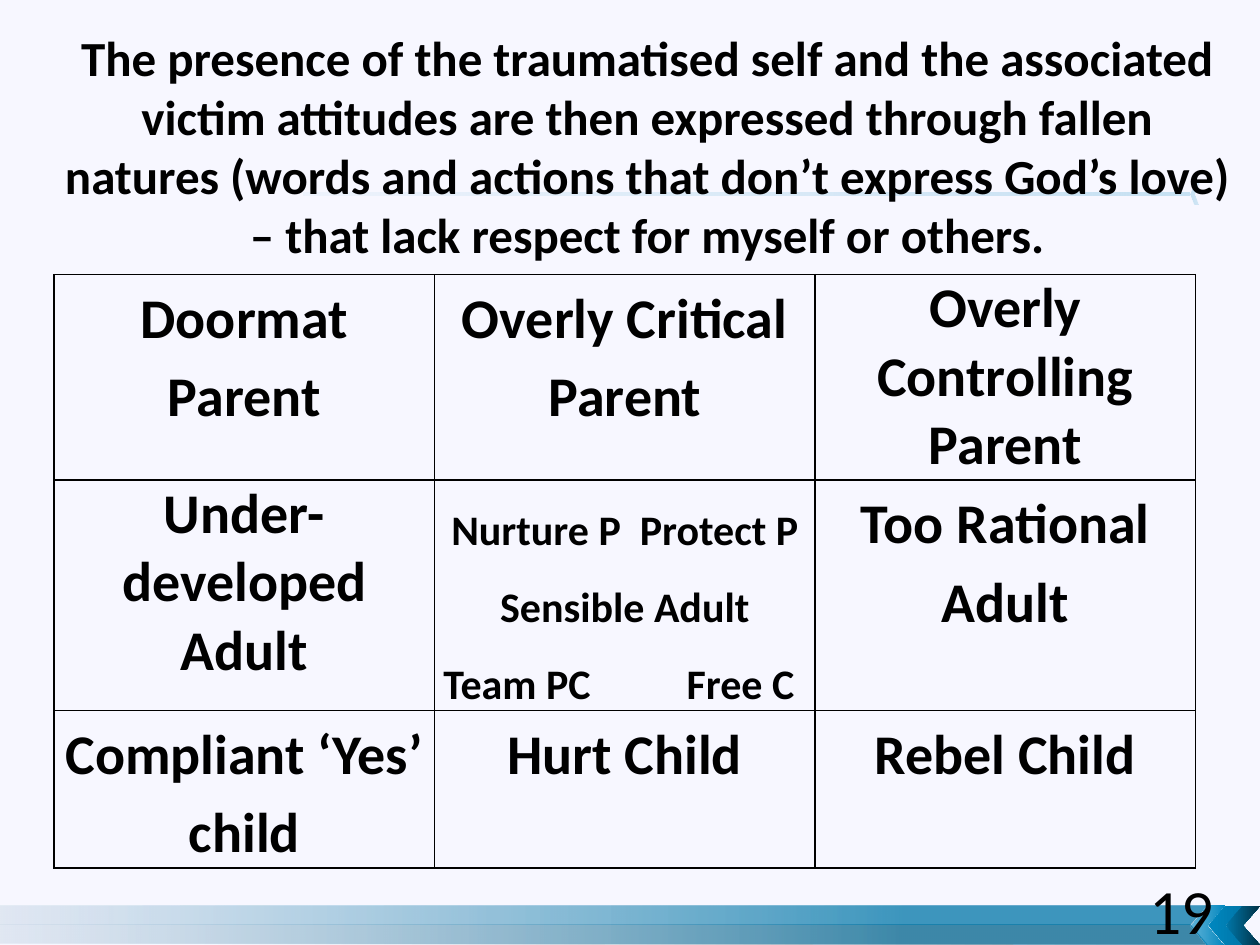
from dataclasses import dataclass

from pptx import Presentation
from pptx.dml.color import RGBColor
from pptx.enum.shapes import MSO_SHAPE as Shape
from pptx.enum.text import MSO_ANCHOR as Anchor, MSO_AUTO_SIZE as AutoSize, PP_ALIGN as Align
from pptx.oxml import parse_xml
from pptx.oxml.ns import nsdecls, qn
from pptx.util import Inches, Pt


@dataclass(frozen=True)
class Theme:
    """Colours, font and type sizes."""
    font: str = "Calibri"
    ink: str = "000000"
    ground: str = "F7F7FF"
    pale: str = "CCD9E8"
    sky: str = "0087BF"
    blue: str = "0077A9"
    teal: str = "00648D"
    navy: str = "003246"
    title: int = 28
    large: int = 32
    small: int = 24
    number: int = 36


def grid(*values):
    """Turn columns and rows of a tenth of an inch into lengths."""
    return [Inches(value / 10) for value in values]


class SlideBuilder:
    """Hold the style and the current slide."""

    def __init__(self, page, theme):
        """Paint the background."""
        self.page, self.theme = page, theme
        fill = page.background.fill
        fill.solid()
        fill.fore_color.rgb = RGBColor.from_string(theme.ground)

    def style(self, para, size, bold=True, align=Align.CENTER):
        """Format one paragraph."""
        para.alignment = align
        font = para.font
        font.name, font.size, font.bold = self.theme.font, Pt(size), bold
        font.color.rgb = RGBColor.from_string(self.theme.ink)

    def blend(self, shape, stops):
        """Fill a shape from right to left with (place, colour, opacity) stops."""
        marks = "".join(
            f'<a:gs pos="{place * 1000}"><a:srgbClr val="{colour}">'
            f'<a:alpha val="{opacity * 1000}"/></a:srgbClr></a:gs>'
            for place, colour, opacity in stops)
        shape.shadow.inherit = False
        shape.line.fill.background()
        shape.fill.gradient()
        properties = shape.element.spPr
        properties.replace(properties.find(qn("a:gradFill")), parse_xml(
            f'<a:gradFill rotWithShape="1" {nsdecls("a")}><a:gsLst>{marks}</a:gsLst>'
            '<a:lin ang="10800000" scaled="0"/></a:gradFill>'))

    def band(self, points, colour):
        """Draw a fading footer band."""
        start, *others = [grid(*point) for point in points]
        builder = self.page.shapes.build_freeform(*start, scale=1.0)
        builder.add_line_segments(others, close=True)
        self.blend(builder.convert_to_shape(),
                   [(25, colour, 75), (100, self.theme.pale, 50)])

    def block(self, kind, frame, stops, flipped=False):
        """Draw a preset shape with a gradient."""
        shape = self.page.shapes.add_shape(kind, *grid(*frame))
        if flipped:
            shape.element.spPr.xfrm.set("flipH", "1")
        self.blend(shape, stops)

    def title(self, text, frame):
        """Place the title in front of the decoration."""
        title = self.page.shapes.title
        title.left, title.top, title.width, title.height = grid(*frame)
        self.page.shapes.element.append(title.element)
        self.fill_frame(title.text_frame, text, self.theme.title)

    def number(self, text, frame):
        """Add the slide number."""
        box = self.page.shapes.add_textbox(*grid(*frame))
        self.fill_frame(box.text_frame, text, self.theme.number, bold=False)

    def fill_frame(self, frame, text, size, bold=True):
        """Write centred text in a frame."""
        frame.text = text
        frame.word_wrap, frame.auto_size = True, AutoSize.NONE
        frame.vertical_anchor = Anchor.MIDDLE
        self.style(frame.paragraphs[0], size, bold)

    def table(self, rows, frame, heights):
        """Add a ruled table of equal columns."""
        holder = self.page.shapes.add_table(len(rows), len(rows[0]), *grid(*frame))
        table = holder.table
        table.first_row = table.horz_banding = False
        for row, height in zip(table.rows, grid(*heights)):
            row.height = height
        for row, entries in zip(table.rows, rows):
            for cell, (text, spacing, size) in zip(row.cells, entries):
                self.cell(cell, text, spacing, size)

    def cell(self, cell, text, spacing, size):
        """Write and rule one cell."""
        cell.margin_left = cell.margin_right = Inches(0.07)
        cell.margin_top = cell.margin_bottom = 0
        cell.fill.background()
        cell.text = text
        for para in cell.text_frame.paragraphs:
            tabbed = "\t" in para.text
            para.line_spacing = spacing
            if tabbed:
                para._p.get_or_add_pPr().append(parse_xml(
                    f'<a:tabLst {nsdecls("a")}><a:tab pos="{Inches(1.93)}" algn="l"/></a:tabLst>'))
            self.style(para, size, align=Align.LEFT if tabbed else Align.CENTER)
        properties = cell._tc.get_or_add_tcPr()
        for index, side in enumerate(("lnL", "lnR", "lnT", "lnB")):
            properties.insert(index, parse_xml(
                f'<a:{side} w="{Pt(1)}" {nsdecls("a")}><a:solidFill>'
                f'<a:srgbClr val="{self.theme.ink}"/></a:solidFill></a:{side}>'))


def main():
    """Build and save the slide."""
    theme = Theme()
    deck = Presentation()
    deck.slide_width, deck.slide_height = grid(100, 75)
    slide = SlideBuilder(deck.slides.add_slide(deck.slide_layouts[5]), theme)

    slide.band([(95.8, 75), (0, 74.9), (0, 73.4), (94.4, 73.4)], theme.teal)
    slide.band([(95.8, 71.9), (0, 71.9), (0, 73.4), (94.4, 73.4)], theme.blue)
    shades = [(theme.sky, 60, theme.sky), (theme.sky, 100, theme.blue),
              (theme.blue, 100, theme.navy)]
    for index, (first, opacity, last) in enumerate(shades):
        slide.block(Shape.CHEVRON, (94.5 + 1.4 * index, 71.9, 2.7, 3.1),
                    [(0, first, opacity), (100, last, 100)], flipped=True)
    slide.block(Shape.CHEVRON, (94.5, 14.6, 0.6, 1.6),
                [(0, theme.sky, 20), (100, theme.sky, 15)], flipped=True)
    slide.block(Shape.RECTANGLE, (24.1, 15.3, 70.3, 0.2),
                [(0, theme.sky, 20), (100, theme.sky, 4)])

    slide.title("The presence of the traumatised self and the associated victim attitudes "
                "are then expressed through fallen natures (words and actions that don’t "
                "express God’s love) – that lack respect for myself or others.",
                (3.9, 2.1, 94.9, 18.9))
    slide.number("19", (89.4, 69.3, 8.7, 5.7))

    def loose(text):
        """Give a large entry with open lines."""
        return text, 1.15, theme.large

    def tight(text):
        """Give a large entry with single lines."""
        return text, 1.0, theme.large

    centre = "Nurture P  Protect P\nSensible Adult\nTeam PC\tFree C"
    slide.table([
        [loose("Doormat Parent"), loose("Overly Critical Parent"),
         tight("Overly Controlling Parent")],
        [tight("Under-developed Adult"), (centre, 1.5, theme.small),
         loose("Too Rational Adult")],
        [loose("Compliant ‘Yes’ child"), loose("Hurt Child"), loose("Rebel Child")],
    ], (4.3, 21.8, 90.6, 45.6), (14.2, 17.1, 10.4))
    deck.save("out.pptx")


if __name__ == "__main__":
    main()
